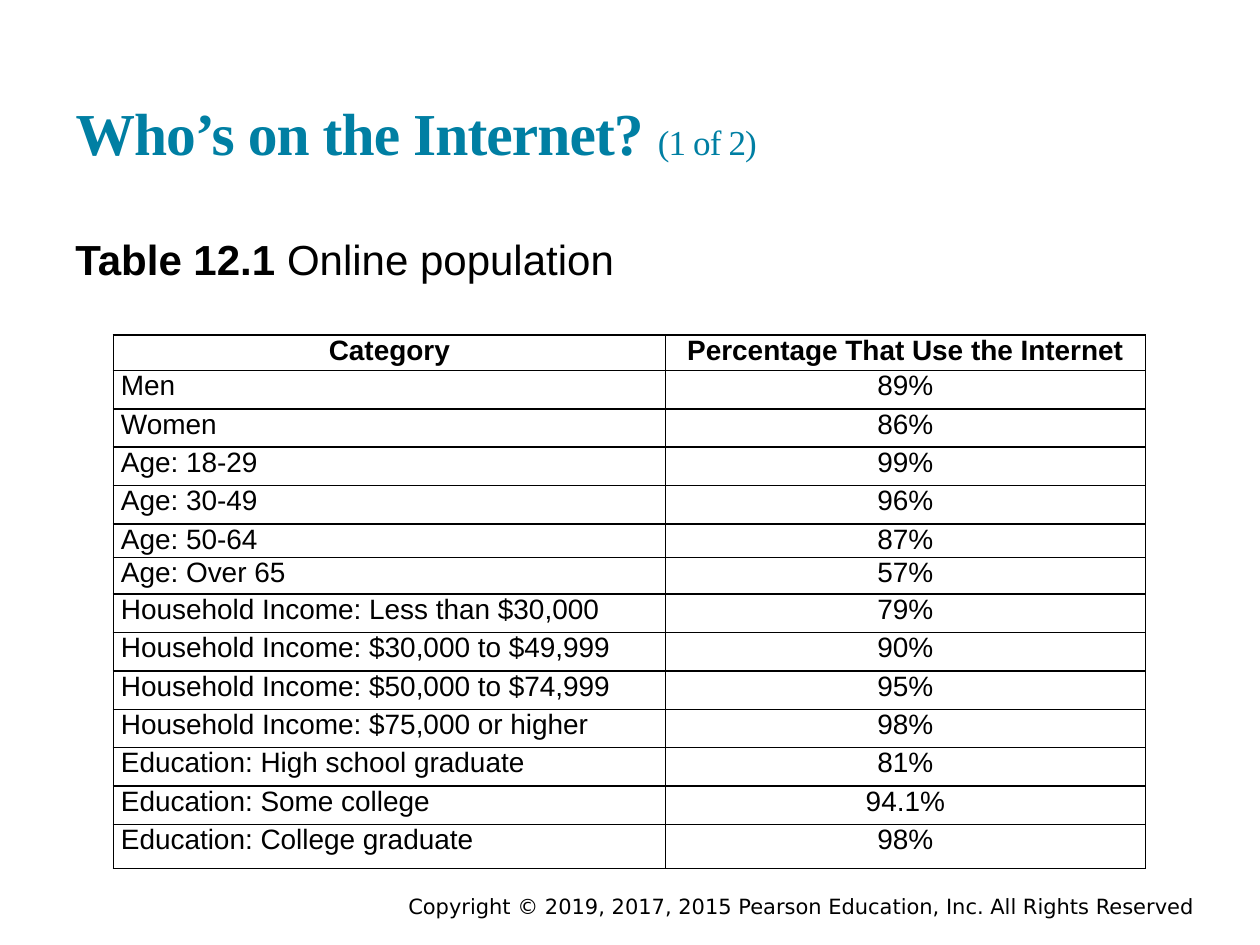
from lxml.etree import SubElement
from pptx import Presentation
from pptx.dml.color import RGBColor
from pptx.enum.text import MSO_ANCHOR as Anchor, PP_ALIGN as Align
from pptx.oxml.ns import qn
from pptx.util import Inches, Pt

TEAL = RGBColor(0x00, 0x7F, 0xA3)
BLACK = RGBColor(0, 0, 0)

# Content
TITLE = [("Who’s on the Internet? ", 34, True), ("(1 of 2)", 20, False)]
LABEL = [("Table 12.1 ", 24, True), ("Online population", 24, False)]
NOTICE = [("Copyright © 2019, 2017, 2015 Pearson Education, Inc. "
           "All Rights Reserved", 12, False)]
ROWS = [
    ("Category", "Percentage That Use the Internet"),
    ("Men", "89%"),
    ("Women", "86%"),
    ("Age: 18-29", "99%"),
    ("Age: 30-49", "96%"),
    ("Age: 50-64", "87%"),
    ("Age: Over 65", "57%"),
    ("Household Income: Less than $30,000", "79%"),
    ("Household Income: $30,000 to $49,999", "90%"),
    ("Household Income: $50,000 to $74,999", "95%"),
    ("Household Income: $75,000 or higher", "98%"),
    ("Education: High school graduate", "81%"),
    ("Education: Some college", "94.1%"),
    ("Education: College graduate", "98%"),
]
WIDTHS = (4.38, 3.81)
ROW_H = 0.305
ODD_H = {0: 0.28, 5: 0.24, 6: 0.29, 13: 0.35}


def add_runs(para, parts, face, color):
    for text, size, bold in parts:
        run = para.add_run()
        run.text = text
        font = run.font
        font.name, font.size, font.bold = face, Pt(size), bold
        font.color.rgb = color


def set_pad(frame, side, ends):
    frame.margin_left = frame.margin_right = Inches(side)
    frame.margin_top = frame.margin_bottom = Inches(ends)


def add_text(slide, box, parts, face, pad, anchor, align):
    frame = slide.shapes.add_textbox(*map(Inches, box)).text_frame
    frame.word_wrap = True
    frame.vertical_anchor = anchor
    set_pad(frame, 0.1, pad)
    para = frame.paragraphs[0]
    para.alignment = align
    add_runs(para, parts, face, BLACK)


def add_border(cell):
    props = cell._tc.get_or_add_tcPr()
    for side in ("lnL", "lnR", "lnT", "lnB"):
        line = SubElement(props, qn(f"a:{side}"), w=str(Pt(1)))
        fill = SubElement(line, qn("a:solidFill"))
        SubElement(fill, qn("a:srgbClr"), val=str(BLACK))


deck = Presentation()
deck.slide_width, deck.slide_height = Inches(10), Inches(7.5)
slide = deck.slides.add_slide(deck.slide_layouts[5])

# Title
title = slide.shapes.title
title.left, title.top = Inches(0.5), Inches(0.66)
title.width, title.height = Inches(9), Inches(0.77)
frame = title.text_frame
frame.vertical_anchor = Anchor.BOTTOM
set_pad(frame, 0.1, 0.1)
para = frame.paragraphs[0]
para.alignment = Align.LEFT
add_runs(para, TITLE, "Times New Roman", TEAL)
for run in para.runs:
    run.font._element.set("spc", "-50")

# Table label and copyright line
add_text(slide, (0.5, 1.75, 9, 0.59), LABEL, "Arial", 0.1,
         Anchor.TOP, Align.LEFT)
add_text(slide, (2.97, 7.07, 6.61, 0.25), NOTICE, "DejaVu Sans", 0.05,
         Anchor.MIDDLE, Align.RIGHT)

# Table
heights = [ODD_H.get(i, ROW_H) for i in range(len(ROWS))]
table = slide.shapes.add_table(
    len(ROWS), len(WIDTHS), Inches(0.9), Inches(2.66),
    Inches(sum(WIDTHS)), Inches(sum(heights))).table
table.first_row = table.horz_banding = False
for col, width in zip(table.columns, WIDTHS):
    col.width = Inches(width)
for r, texts in enumerate(ROWS):
    table.rows[r].height = Inches(heights[r])
    for c, text in enumerate(texts):
        cell = table.cell(r, c)
        set_pad(cell, 0.06, 0)
        add_border(cell)
        cell.fill.background()
        para = cell.text_frame.paragraphs[0]
        para.alignment = Align.CENTER if r == 0 or c == 1 else Align.LEFT
        add_runs(para, [(text, 16, r == 0)], "Arial", BLACK)

deck.save("out.pptx")
